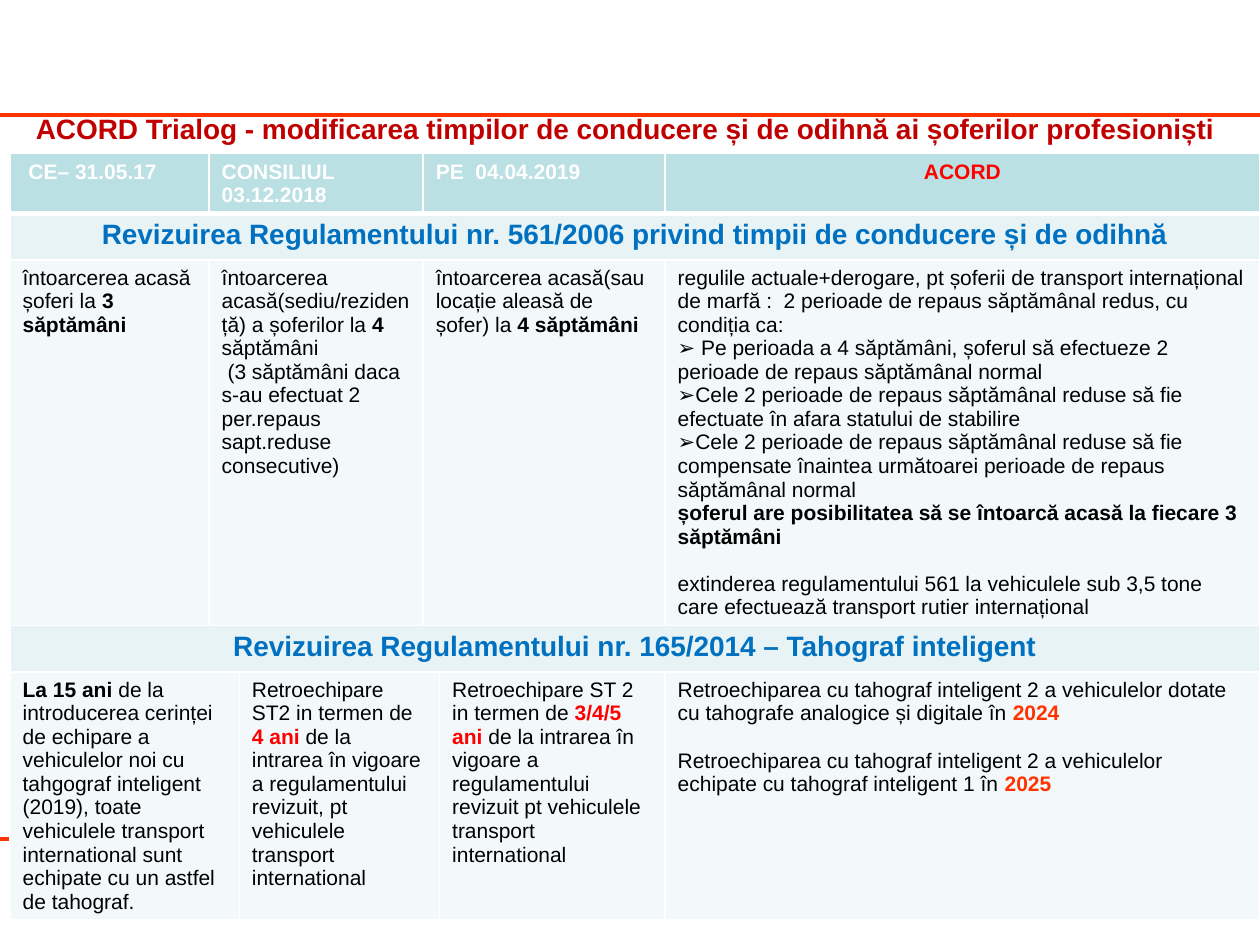
from lxml import etree
from pptx import Presentation, util as u
from pptx.dml.color import RGBColor
from pptx.enum import shapes, text
from pptx.oxml.ns import qn

WHITE = RGBColor(0xFF, 0xFF, 0xFF)
BLACK = RGBColor(0, 0, 0)
RED = RGBColor(0xFF, 0, 0)
ORANGE = RGBColor(0xFF, 0x33, 0)
WINE = RGBColor(0xC0, 0, 0)
BLUE = RGBColor(0, 0x70, 0xC0)
TEAL = RGBColor(0xBB, 0xE0, 0xE3)
BAND = RGBColor(0xE7, 0xF3, 0xF4)
PALE = RGBColor(0xF3, 0xF9, 0xFA)

CENTER = text.PP_ALIGN.CENTER
COLS = [1.58, 0.13, 1.46, 0.13, 1.79, 4.72]
ROWS = [0.46, 0.37, 2.86, 0.37, 1.94]


def run(words, bold=False, color=BLACK, size=12):
    return words, bold, color, size


def par(*runs, align=None, bullet=None, gap=0):
    return runs, align, bullet, gap


def head(words, color=WHITE, align=None):
    return [par(run(words, True, color), align=align)]


def band(words):
    return [par(run(words, True, BLUE, 16), align=CENTER)]


def item(words):
    return par(run(words), bullet="➢")


# Each row: fill, then (first column, columns spanned, paragraphs)
GRID = [
    (TEAL, [
        (0, 1, head(" CE– 31.05.17")),
        (1, 2, head("CONSILIUL 03.12.2018")),
        (3, 2, head("PE  04.04.2019")),
        (5, 1, head("ACORD", RED, CENTER)),
    ]),
    (BAND, [(0, 6, band("Revizuirea Regulamentului nr. 561/2006 privind timpii "
                        "de conducere și de odihnă"))]),
    (PALE, [
        (0, 1, [par(run("întoarcerea acasă șoferi la "), run("3 săptămâni", True))]),
        (1, 2, [
            par(run("întoarcerea acasă(sediu/rezidență) a șoferilor la"),
                run(" 4 ", True), run("săptămâni")),
            par(run(" (3 săptămâni daca s-au efectuat 2 per.repaus "
                    "sapt.reduse consecutive)")),
        ]),
        (3, 2, [par(run("întoarcerea acasă(sau locație aleasă de șofer) la"),
                    run(" 4 săptămâni", True))]),
        (5, 1, [
            par(run("regulile actuale+derogare, pt șoferii de transport "
                    "internațional de marfă :  2 perioade de repaus săptămânal "
                    "redus, cu condiția ca:")),
            item(" Pe perioada a 4 săptămâni, șoferul să efectueze 2 perioade "
                 "de repaus săptămânal normal"),
            item("Cele 2 perioade de repaus săptămânal reduse să fie efectuate "
                 "în afara statului de stabilire"),
            item("Cele 2 perioade de repaus săptămânal reduse să fie compensate "
                 "înaintea următoarei perioade de repaus săptămânal normal"),
            par(run("șoferul are posibilitatea să se întoarcă acasă la fiecare "
                    "3 săptămâni", True)),
            par(run("extinderea regulamentului 561 la vehiculele sub 3,5 tone "
                    "care efectuează transport rutier internațional"), gap=13.5),
        ]),
    ]),
    (BAND, [(0, 6, band("Revizuirea Regulamentului nr. 165/2014 – "
                        "Tahograf inteligent"))]),
    (PALE, [
        (0, 2, [par(run("La 15 ani ", True),
                    run("de la introducerea cerinței de echipare a vehiculelor "
                        "noi cu tahgograf inteligent (2019), toate vehiculele "
                        "transport international sunt echipate cu un astfel de "
                        "tahograf."))]),
        (2, 2, [par(run("Retroechipare ST2 in termen de "), run("4 ani", True, RED),
                    run(" de la intrarea în vigoare a regulamentului revizuit, "
                        "pt vehiculele transport international"))]),
        (4, 1, [par(run("Retroechipare ST 2 in termen de"),
                    run(" 3/4/5 ani", True, RED),
                    run(" de la intrarea în vigoare a regulamentului revizuit "
                        "pt vehiculele transport international"))]),
        (5, 1, [
            par(run("Retroechiparea cu tahograf inteligent 2 a vehiculelor dotate "
                    "cu tahografe analogice și digitale în "),
                run("2024", True, ORANGE)),
            par(run("Retroechiparea cu tahograf inteligent 2 a vehiculelor "
                    "echipate cu tahograf inteligent 1 în "),
                run("2025", True, ORANGE), gap=13.5),
        ]),
    ]),
]


class Deck:
    font = "Arial"

    def __init__(self):
        self.prs = Presentation()
        self.prs.slide_width = u.Inches(10)
        self.prs.slide_height = u.Inches(7.5)
        self.slide = self.prs.slides.add_slide(self.prs.slide_layouts[5])

    def rule(self, top):
        line = self.slide.shapes.add_connector(
            shapes.MSO_CONNECTOR.STRAIGHT,
            u.Inches(0), u.Inches(top), u.Inches(10), u.Inches(top))
        line.line.color.rgb = ORANGE
        line.line.width = u.Pt(2.25)
        etree.SubElement(line._element.spPr, qn("a:effectLst"))

    def fill(self, frame, pars):
        """Write the paragraphs into a text frame, run by run."""
        for i, (runs, align, bullet, gap) in enumerate(pars):
            p = frame.add_paragraph() if i else frame.paragraphs[0]
            if bullet:
                props = p._p.get_or_add_pPr()
                props.set("marL", "0")
                props.set("indent", "0")
                etree.SubElement(props, qn("a:buFont"), typeface=self.font)
                etree.SubElement(props, qn("a:buChar"), char=bullet)
            if align is not None:
                p.alignment = align
            if gap:
                p.space_before = u.Pt(gap)
            for words, bold, color, size in runs:
                r = p.add_run()
                r.text = words
                r.font.name = self.font
                r.font.size = u.Pt(size)
                r.font.bold = bold
                r.font.color.rgb = color

    def title(self, words, left, top, width, height):
        box = self.slide.shapes.title
        box.left, box.top = u.Inches(left), u.Inches(top)
        box.width, box.height = u.Inches(width), u.Inches(height)
        frame = box.text_frame
        frame.word_wrap = True
        frame.auto_size = text.MSO_AUTO_SIZE.NONE
        frame.vertical_anchor = text.MSO_ANCHOR.MIDDLE
        self.fill(frame, [par(run(words, True, WINE, 16), align=CENTER)])

    def edge(self, cell, side, width):
        ln = etree.SubElement(cell._tc.get_or_add_tcPr(), qn("a:ln" + side),
                              w=str(u.Pt(width)))
        paint = etree.SubElement(ln, qn("a:solidFill"))
        etree.SubElement(paint, qn("a:srgbClr"), val=str(WHITE))

    def table(self, left, top):
        grid = self.slide.shapes.add_table(
            len(ROWS), len(COLS), u.Inches(left), u.Inches(top),
            u.Inches(sum(COLS)), u.Inches(sum(ROWS))).table
        grid.first_row = grid.horz_banding = False
        for col, width in zip(grid.columns, COLS):
            col.width = u.Inches(width)
        for n, (color, cells) in enumerate(GRID):
            grid.rows[n].height = u.Inches(ROWS[n])
            for c in range(len(COLS)):
                cell = grid.cell(n, c)
                for side in "LRTB":
                    thick = (n, side) in ((0, "B"), (1, "T"))
                    self.edge(cell, side, 3 if thick else 1)
                cell.fill.solid()
                cell.fill.fore_color.rgb = color
            for c, span, pars in cells:
                cell = grid.cell(n, c)
                if span > 1:
                    cell.merge(grid.cell(n, c + span - 1))
                self.fill(cell.text_frame, pars)


def main():
    deck = Deck()
    for top in (0.91, 6.66):
        deck.rule(top)
    deck.table(0.08, 1.22)
    deck.title("ACORD Trialog - modificarea timpilor de conducere și de odihnă "
               "ai șoferilor profesioniști ", 0.15, 0.75, 9.69, 0.54)
    deck.prs.save("out.pptx")


if __name__ == "__main__":
    main()
